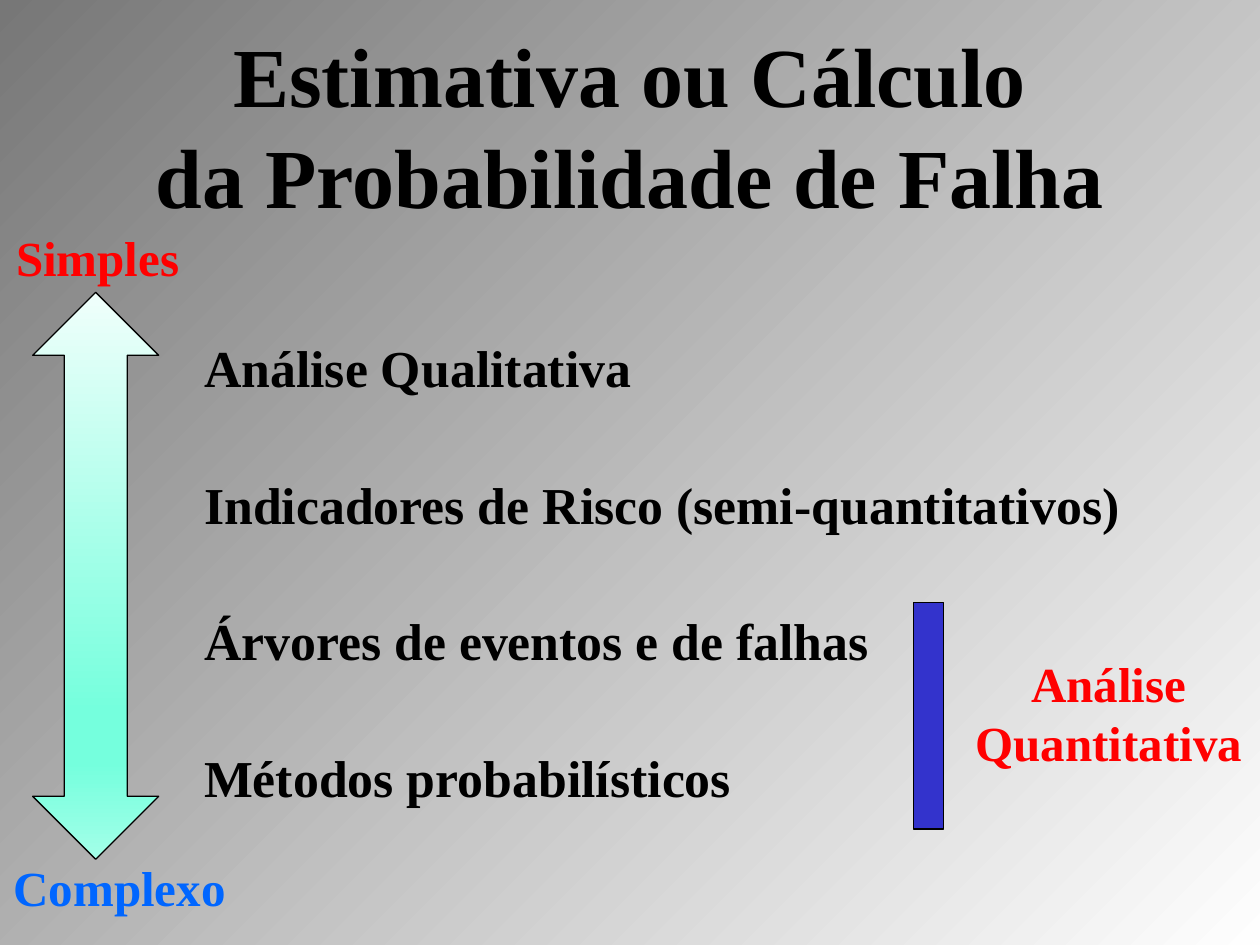
from lxml import etree
from pptx import Presentation
from pptx import util as u
from pptx.dml.color import RGBColor
from pptx.enum import shapes, text
from pptx.oxml.ns import qn

PX = 9144  # EMU per px, 100 px to the inch
COLORS = {"black": "000000", "red": "FF0000", "blue": "0066FF", "bar": "3333CC"}
BACKDROP = [(0, "777777"), (100, "FEFEFE")]
MINT = [(0, "F0FFFB"), (74, "75FFDD"), (83, "75FFDD"), (100, "A3FFE8")]


class SlideBuilder:
    font = "Times New Roman"

    def __init__(self, deck):
        self.slide = deck.slides.add_slide(deck.slide_layouts[5])

    def gradient(self, fill, element, stops, angle):
        fill.gradient()
        fill.gradient_angle = angle
        stop_list = next(element.iter(qn("a:gsLst")))
        for old in list(stop_list):
            stop_list.remove(old)
        for percent, color in stops:
            stop = etree.SubElement(stop_list, qn("a:gs"), pos=str(percent * 1000))
            etree.SubElement(stop, qn("a:srgbClr"), val=color)

    def background(self, stops, angle):
        self.gradient(self.slide.background.fill, self.slide.element, stops, angle)

    def set_text(self, box, lines, size, color, align, spacing=1.0, gap=0):
        frame = box.text_frame
        frame.text = "\n".join(lines)
        for index, para in enumerate(frame.paragraphs):
            para.alignment = align
            para.line_spacing = spacing
            para.space_before = u.Pt(gap if index else 0)
            for span in para.runs:
                span.font.name = self.font
                span.font.size = u.Pt(size)
                span.font.bold = True
                span.font.color.rgb = RGBColor.from_string(COLORS[color])

    def inset(self, frame):
        frame.word_wrap = True
        frame.auto_size = text.MSO_AUTO_SIZE.NONE
        frame.margin_left = frame.margin_right = 7 * PX
        frame.margin_top = frame.margin_bottom = 4 * PX

    def title(self, place, lines):
        box = self.slide.shapes.title
        box.left, box.top, box.width, box.height = (n * PX for n in place)
        self.inset(box.text_frame)
        box.text_frame.vertical_anchor = text.MSO_ANCHOR.MIDDLE
        self.set_text(box, lines, 48, "black", text.PP_ALIGN.CENTER)

    def methods(self, place, lines):
        box = self.slide.shapes.add_textbox(*(n * PX for n in place))
        self.inset(box.text_frame)
        self.set_text(box, lines, 29.6, "black", text.PP_ALIGN.LEFT, 0.8, 49.6)

    def label(self, place, lines, color):
        box = self.slide.shapes.add_textbox(*(n * PX for n in place))
        box.text_frame.word_wrap = False
        box.text_frame.auto_size = text.MSO_AUTO_SIZE.SHAPE_TO_FIT_TEXT
        self.set_text(box, lines, 28, color, text.PP_ALIGN.CENTER)

    def shape(self, kind, place, color=None, stops=None):
        shape = self.slide.shapes.add_shape(kind, *(n * PX for n in place))
        shape.shadow.inherit = False
        shape.line.color.rgb = RGBColor.from_string(COLORS["black"])
        shape.line.width = u.Pt(0.75)
        if stops:
            self.gradient(shape.fill, shape.element, stops, 270)
        else:
            shape.fill.solid()
            shape.fill.fore_color.rgb = RGBColor.from_string(COLORS[color])


def main():
    deck = Presentation()
    deck.slide_width, deck.slide_height = 1000 * PX, 750 * PX
    page = SlideBuilder(deck)
    page.background(BACKDROP, 315)

    # Title and list of methods
    page.title((0, 2, 1000, 193), ["Estimativa ou Cálculo", "da Probabilidade de Falha"])
    page.methods((155, 272, 771, 389), [
        "Análise Qualitativa",
        "Indicadores de Risco (semi-quantitativos)",
        "Árvores de eventos e de falhas",
        "Métodos probabilísticos",
    ])

    # Bar grouping the quantitative methods
    page.shape(shapes.MSO_SHAPE.RECTANGLE, (725, 478, 24, 180), color="bar")
    page.label((763, 514, 234, 104), ["Análise", "Quantitativa"], "red")

    # Scale from simple to complex
    page.shape(shapes.MSO_SHAPE.UP_DOWN_ARROW, (26, 232, 100, 450), stops=MINT)
    page.label((2, 176, 151, 57), ["Simples"], "red")
    page.label((0, 676, 190, 57), ["Complexo"], "blue")

    deck.save("out.pptx")


if __name__ == "__main__":
    main()
